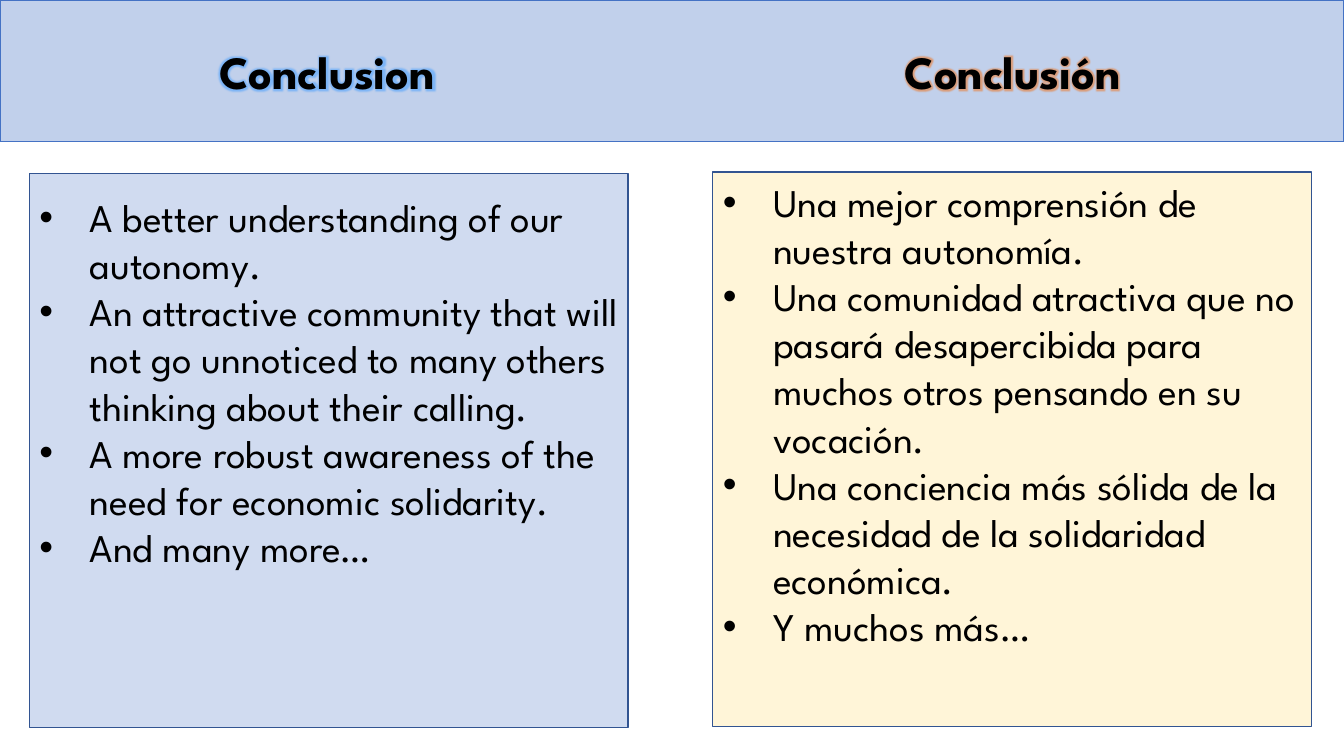
from lxml import etree
from pptx import Presentation
from pptx.dml.color import RGBColor
from pptx.enum.shapes import MSO_SHAPE
from pptx.enum.text import MSO_ANCHOR, MSO_AUTO_SIZE, PP_ALIGN
from pptx.oxml.ns import qn
from pptx.util import Cm, Pt

RECT = MSO_SHAPE.RECTANGLE
TOP, MIDDLE = MSO_ANCHOR.TOP, MSO_ANCHOR.MIDDLE
NO_FIT = MSO_AUTO_SIZE.NONE
LEFT, CENTER = PP_ALIGN.LEFT, PP_ALIGN.CENTER

FONT = "League Spartan"
COLORS = {
    "text": "000000",
    "blue": "4472C4",
    "yellow": "FFD966",
    "border": "325491",
    "blue glow": "4FA3FF",
    "orange glow": "ED7D31",
}

# Placeholder numbers refer to the Comparison layout; lengths are in cm
COLUMNS = [
    {
        "heading": "Conclusion",
        "points": [
            "A better understanding of our autonomy.",
            "An attractive community that will not go unnoticed to many others "
            "thinking about their calling.",
            "A more robust awareness of the need for economic solidarity.",
            "And many more…",
        ],
        "holders": (0, 2), "fill": "blue", "glow": "blue glow",
        "left": 0.74, "top": 4.37, "heading_left": 1.4,
        "list_top": 4.75, "list_height": 12.22,
    },
    {
        "heading": "Conclusión",
        "points": [
            "Una mejor comprensión de nuestra autonomía.",
            "Una comunidad atractiva que no pasará desapercibida para muchos "
            "otros pensando en su vocación.",
            "Una conciencia más sólida de la necesidad de la solidaridad económica.",
            "Y muchos más…",
        ],
        "holders": (3, 4), "fill": "yellow", "glow": "orange glow",
        "left": 17.96, "top": 4.34, "heading_left": 18.67,
        "list_top": 4.37, "list_height": 13.41,
    },
]
SLIDE_W, SLIDE_H = 33.87, 19.05
BANNER_H = 3.56
PANEL_W, PANEL_H = 15.09, 13.97
HEADING_TOP, HEADING_W, HEADING_H = 0.94, 13.69, 1.68
INDENT = 1.27


def rgb(name):
    return RGBColor.from_string(COLORS[name])


def set_all(obj, values):
    for name, value in values.items():
        setattr(obj, name, value)


def add_alpha(color, percent):
    etree.SubElement(color, qn("a:alpha"), val=str(percent * 1000))


def add_panel(slide, box, fill, alpha, border):
    sp = slide.shapes.add_shape(RECT, *map(Cm, box))
    sp.shadow.inherit = False
    sp.fill.solid()
    sp.fill.fore_color.rgb = rgb(fill)
    add_alpha(sp.fill._xPr.find(".//" + qn("a:srgbClr")), alpha)
    sp.line.color.rgb = rgb(border)
    sp.line.width = Pt(1)


def fill_placeholder(slide, sp, box, lines, size, bold, align, anchor):
    """Place the text above the panels and return its paragraphs."""
    slide.shapes._spTree.append(sp._element)
    set_all(sp, dict(zip(("left", "top", "width", "height"), map(Cm, box))))
    tf = sp.text_frame
    tf.text = "\n".join(lines)
    set_all(tf, {"word_wrap": True, "auto_size": NO_FIT, "vertical_anchor": anchor})
    for p in tf.paragraphs:
        set_all(p, {"alignment": align, "line_spacing": 1.0,
                    "space_before": Pt(0), "space_after": Pt(0)})
        font = p.runs[0].font
        set_all(font, {"name": FONT, "size": Pt(size), "bold": bold})
        font.color.rgb = rgb("text")
    return tf.paragraphs


def add_bullet(p):
    pPr = p._p.get_or_add_pPr()
    pPr.set("marL", str(Cm(INDENT)))
    pPr.set("indent", str(-Cm(INDENT)))
    etree.SubElement(pPr, qn("a:buFont"), typeface="Arial")
    etree.SubElement(pPr, qn("a:buChar"), char="•")


def add_glow(r, color):
    effects = etree.Element(qn("a:effectLst"))
    glow = etree.SubElement(effects, qn("a:glow"), rad=str(Pt(5)))
    add_alpha(etree.SubElement(glow, qn("a:srgbClr"), val=COLORS[color]), 60)
    r.font._element.find(qn("a:solidFill")).addnext(effects)


def main():
    prs = Presentation()
    prs.slide_width, prs.slide_height = Cm(SLIDE_W), Cm(SLIDE_H)
    slide = prs.slides.add_slide(prs.slide_layouts.get_by_name("Comparison"))
    holders = {sp.placeholder_format.idx: sp for sp in slide.placeholders}

    add_panel(slide, (0, 0, SLIDE_W, BANNER_H), "blue", 33, "blue")
    for col in COLUMNS:
        add_panel(slide, (col["left"], col["top"], PANEL_W, PANEL_H),
                  col["fill"], 25, "border")
        heading, body = (holders.pop(idx) for idx in col["holders"])
        box = (col["heading_left"], HEADING_TOP, HEADING_W, HEADING_H)
        for p in fill_placeholder(slide, heading, box, [col["heading"]],
                                  33, True, CENTER, MIDDLE):
            add_glow(p.runs[0], col["glow"])
        box = (col["left"], col["list_top"], PANEL_W, col["list_height"])
        for p in fill_placeholder(slide, body, box, col["points"],
                                  28, False, LEFT, TOP):
            add_bullet(p)

    for sp in holders.values():
        slide.shapes._spTree.remove(sp._element)
    prs.save("out.pptx")


if __name__ == "__main__":
    main()
